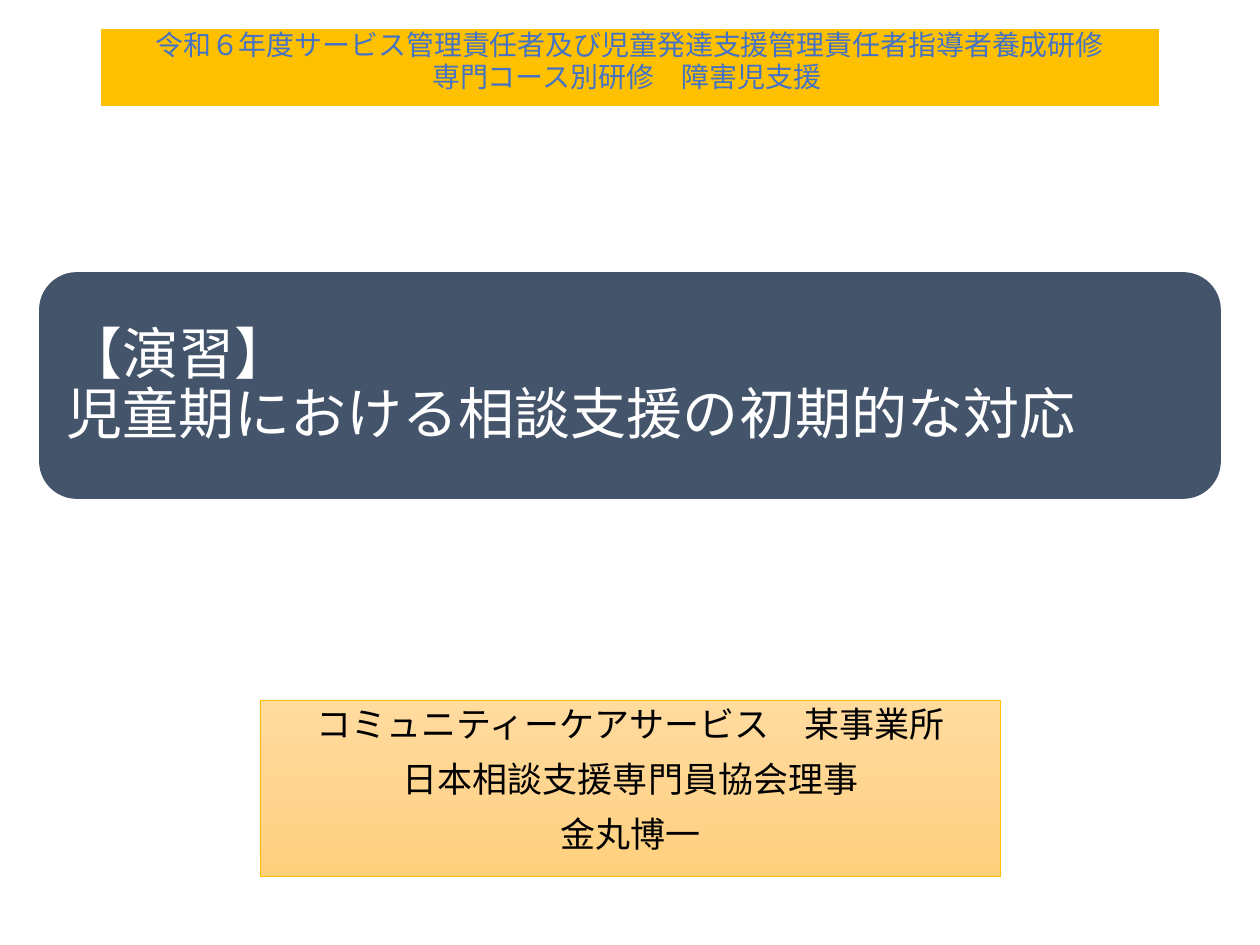
from copy import deepcopy
from dataclasses import dataclass

from pptx import Presentation
from pptx.dml.color import RGBColor
from pptx.enum.shapes import MSO_SHAPE
from pptx.enum.text import MSO_ANCHOR, MSO_AUTO_SIZE, PP_ALIGN
from pptx.oxml.ns import qn
from pptx.util import Inches, Pt


@dataclass(frozen=True)
class Box:
    left: float
    top: float
    width: float
    height: float


@dataclass(frozen=True)
class Panel:
    box: Box
    fill: str
    line: str = ""
    line_width: float = 0
    preset: MSO_SHAPE = MSO_SHAPE.RECTANGLE


BANNER = Panel(Box(0.79, 0.22, 8.42, 0.63), "FFC000", "FFFFFF", 1.5)
TITLE_CARD = Panel(Box(0.31, 2.16, 9.38, 1.8), "44546A", preset=MSO_SHAPE.ROUNDED_RECTANGLE)
TITLE_BOX = Box(0.4, 2.25, 9.2, 1.63)
SPEAKER_BOX = Box(2.07, 5.56, 5.87, 1.4)
SPEAKER_GRADIENT = ["FFDB9E", "FFD590", "FFD07C"]


def color(value: str) -> RGBColor:
    return RGBColor.from_string(value)


def place(shape, box: Box) -> None:
    shape.left, shape.top = Inches(box.left), Inches(box.top)
    shape.width, shape.height = Inches(box.width), Inches(box.height)


def draw_panel(slide, panel: Panel):
    box = panel.box
    shape = slide.shapes.add_shape(
        panel.preset, Inches(box.left), Inches(box.top), Inches(box.width), Inches(box.height)
    )
    shape.shadow.inherit = False
    shape.fill.solid()
    shape.fill.fore_color.rgb = color(panel.fill)
    if panel.line:
        shape.line.color.rgb = color(panel.line)
        shape.line.width = Pt(panel.line_width)
    else:
        shape.line.fill.background()
    return shape


def write(shape, lines: list[str], *, size: float, font: str, ink: str,
          align: PP_ALIGN = PP_ALIGN.CENTER, anchor: MSO_ANCHOR = MSO_ANCHOR.TOP,
          line_spacing: float = 0.9, before: float = 0,
          inset_x: float = 0.1, inset_y: float = 0.05) -> None:
    frame = shape.text_frame
    frame.word_wrap = True
    frame.auto_size = MSO_AUTO_SIZE.NONE
    frame.vertical_anchor = anchor
    frame.margin_left = frame.margin_right = Inches(inset_x)
    frame.margin_top = frame.margin_bottom = Inches(inset_y)
    for index, line in enumerate(lines):
        paragraph = frame.add_paragraph() if index else frame.paragraphs[0]
        paragraph.text = line
        paragraph.alignment = align
        paragraph.line_spacing = line_spacing
        paragraph.space_before = Pt(before if index else 0)
        for run in paragraph.runs:
            run.font.size = Pt(size)
            run.font.name = font
            run.font.bold = False
            run.font.color.rgb = color(ink)
        for line_break in paragraph._p.findall(qn("a:br")):
            line_break.insert(0, deepcopy(paragraph.runs[0].font._element))


def fill_gradient(shape, hues: list[str]) -> None:
    shape.fill.gradient()
    shape.fill.gradient_angle = 270
    stop_list = shape._element.spPr.find(qn("a:gradFill")).find(qn("a:gsLst"))
    while len(stop_list) < len(hues):
        stop_list.append(deepcopy(stop_list[0]))
    for index, (stop, hue) in enumerate(zip(shape.fill.gradient_stops, hues)):
        stop.position = index / (len(hues) - 1)
        stop.color.rgb = color(hue)


def main() -> None:
    presentation = Presentation()
    presentation.slide_width, presentation.slide_height = Inches(10), Inches(7.5)
    slide = presentation.slides.add_slide(presentation.slide_layouts[0])
    title, speaker = slide.shapes.title, slide.placeholders[1]

    title_card = draw_panel(slide, TITLE_CARD)
    title._element.addprevious(title_card._element)
    place(title, TITLE_BOX)
    write(title, ["【演習】\v児童期における相談支援の初期的な対応"],
          size=32, font="Calibri", ink="FFFFFF", align=PP_ALIGN.LEFT,
          anchor=MSO_ANCHOR.MIDDLE, inset_x=0.13, inset_y=0.13)

    place(speaker, SPEAKER_BOX)
    fill_gradient(speaker, SPEAKER_GRADIENT)
    speaker.line.color.rgb = color("FFC000")
    speaker.line.width = Pt(0.5)
    write(speaker, ["コミュニティーケアサービス　某事業所", "日本相談支援専門員協会理事", "金丸博一"],
          size=20, font="Arial", ink="000000", before=10)

    banner = draw_panel(slide, BANNER)
    write(banner, ["令和６年度サービス管理責任者及び児童発達支援管理責任者指導者養成研修",
                   "専門コース別研修　障害児支援 "],
          size=16, font="Calibri", ink="4472C4", line_spacing=0.8, before=3.2, inset_y=0.05)

    presentation.save("out.pptx")


if __name__ == "__main__":
    main()
